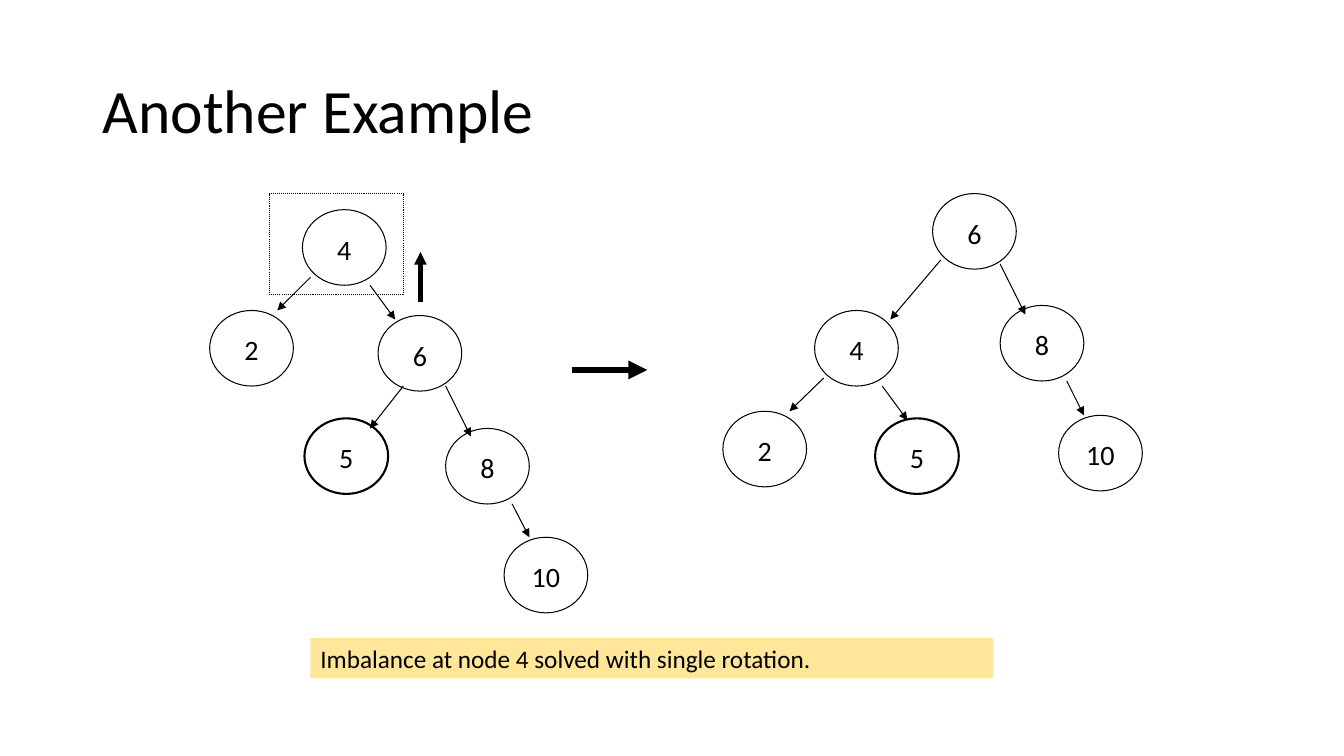
import pptx
import pptx.dml.color
import pptx.enum.dml
import pptx.enum.shapes
import pptx.enum.text
import pptx.oxml
import pptx.oxml.ns
import pptx.util

Inches = pptx.util.Inches
RGBColor = pptx.dml.color.RGBColor
Anchor = pptx.enum.text.MSO_ANCHOR
Align = pptx.enum.text.PP_ALIGN
Shape = pptx.enum.shapes.MSO_SHAPE

BLACK = RGBColor(0, 0, 0)
GOLD = RGBColor(0xFF, 0xE6, 0x99)
NODE_W, NODE_H = 0.83, 0.75
NEW_KEY = "5"

NODE_FRAME = {"word_wrap": False, "vertical_anchor": Anchor.MIDDLE,
              "margin_left": 0, "margin_right": 0,
              "margin_top": Inches(0.03), "margin_bottom": 0}
NOTE_FRAME = {"word_wrap": True, "vertical_anchor": Anchor.TOP}
TITLE_FRAME = {"word_wrap": True, "vertical_anchor": Anchor.MIDDLE}

# Offsets from the corner of each tree: key, left, top
OLD_NODES = [("4", 0.92, 0.16), ("2", 0, 1.16), ("6", 1.67, 1.21),
             ("5", 0.94, 2.23), ("8", 2.34, 2.33), ("10", 2.92, 3.41)]
NEW_NODES = [("6", 2.08, 0), ("4", 0.91, 1.16), ("8", 2.75, 1.11),
             ("2", 0, 2.16), ("5", 1.51, 2.23), ("10", 3.33, 2.2)]
# Start x, y and end x, y of each edge
OLD_EDGES = [(1, 0.83, 0.67, 1.16), (1.59, 0.91, 1.84, 1.25),
             (1.92, 1.91, 1.59, 2.33), (2.34, 1.91, 2.59, 2.41),
             (3, 3.08, 3.17, 3.41)]
NEW_EDGES = [(2.16, 0.66, 1.66, 1.25), (2.75, 0.7, 3, 1.2),
             (1, 1.83, 0.66, 2.16), (1.58, 1.91, 1.83, 2.25),
             (3.41, 1.86, 3.58, 2.2)]


def set_all(item, values):
    for name, value in values.items():
        setattr(item, name, value)


def set_text(shape, text, size, frame, align=Align.LEFT):
    set_all(shape.text_frame, frame)
    para = shape.text_frame.paragraphs[0]
    para.alignment = align
    run = para.add_run()
    run.text = text
    set_all(run.font, {"name": "Calibri", "size": pptx.util.Pt(size)})
    run.font.color.rgb = BLACK
    return para


def set_line(line, width):
    line.fill.solid()
    line.fill.fore_color.rgb = BLACK
    line.width = pptx.util.Pt(width)


def add_shape(slide, kind, box):
    """Add a plain shape with no fill and no shadow."""
    shape = slide.shapes.add_shape(kind, *map(Inches, box))
    shape.shadow.inherit = False
    shape.fill.background()
    return shape


def add_arrow(slide, ends, width=0.75):
    arrow = slide.shapes.add_connector(
        pptx.enum.shapes.MSO_CONNECTOR.STRAIGHT, *map(Inches, ends))
    set_line(arrow.line, width)
    make = pptx.oxml.ns.qn
    props = arrow.line._get_or_add_ln()
    tip = props.makeelement(make("a:tailEnd"), {"type": "triangle"})
    props.append(tip)
    props.addnext(props.makeelement(make("a:effectLst"), {}))


def add_tree(slide, left, top, nodes, edges):
    for key, x, y in nodes:
        node = add_shape(slide, Shape.OVAL,
                         (left + x, top + y, NODE_W, NODE_H))
        set_line(node.line, 1.5 if key == NEW_KEY else 0.75)
        set_text(node, key, 20, NODE_FRAME, Align.CENTER)
    for x1, y1, x2, y2 in edges:
        add_arrow(slide, (left + x1, top + y1, left + x2, top + y2))


def add_focus(slide, left, top):
    """Frame the node out of balance and show the lift beside it."""
    frame = add_shape(slide, Shape.RECTANGLE, (left, top, 1.33, 1))
    set_line(frame.line, 0.75)
    frame.line.dash_style = pptx.enum.dml.MSO_LINE.ROUND_DOT
    add_arrow(slide, (left + 1.5, top + 1.08, left + 1.5, top + 0.58), 3)


def add_title(slide, left, top, width, height):
    title = slide.shapes.title
    set_all(title, {"left": Inches(left), "top": Inches(top),
                    "width": Inches(width), "height": Inches(height)})
    para = set_text(title, "Another Example", 44, TITLE_FRAME)
    para.line_spacing = 0.9


def add_note(slide, *box):
    note = add_shape(slide, Shape.RECTANGLE, box)
    note.fill.solid()
    note.fill.fore_color.rgb = GOLD
    note.line.fill.background()
    set_text(note, "Imbalance at node 4 solved with single rotation.",
             18, NOTE_FRAME)


def main():
    deck = pptx.Presentation()
    set_all(deck, {"slide_width": Inches(13.33),
                   "slide_height": Inches(7.5)})
    slide = deck.slides.add_slide(deck.slide_layouts[5])
    add_title(slide, 0.92, 0.4, 11.5, 1.45)
    add_tree(slide, 2.08, 1.92, OLD_NODES, OLD_EDGES)
    add_focus(slide, 2.67, 1.92)
    add_arrow(slide, (5.67, 3.67, 6.42, 3.67), 4.5)
    add_tree(slide, 7.17, 1.92, NEW_NODES, NEW_EDGES)
    add_note(slide, 3.08, 6.33, 6.77, 0.4)
    deck.save("out.pptx")


if __name__ == "__main__":
    main()
